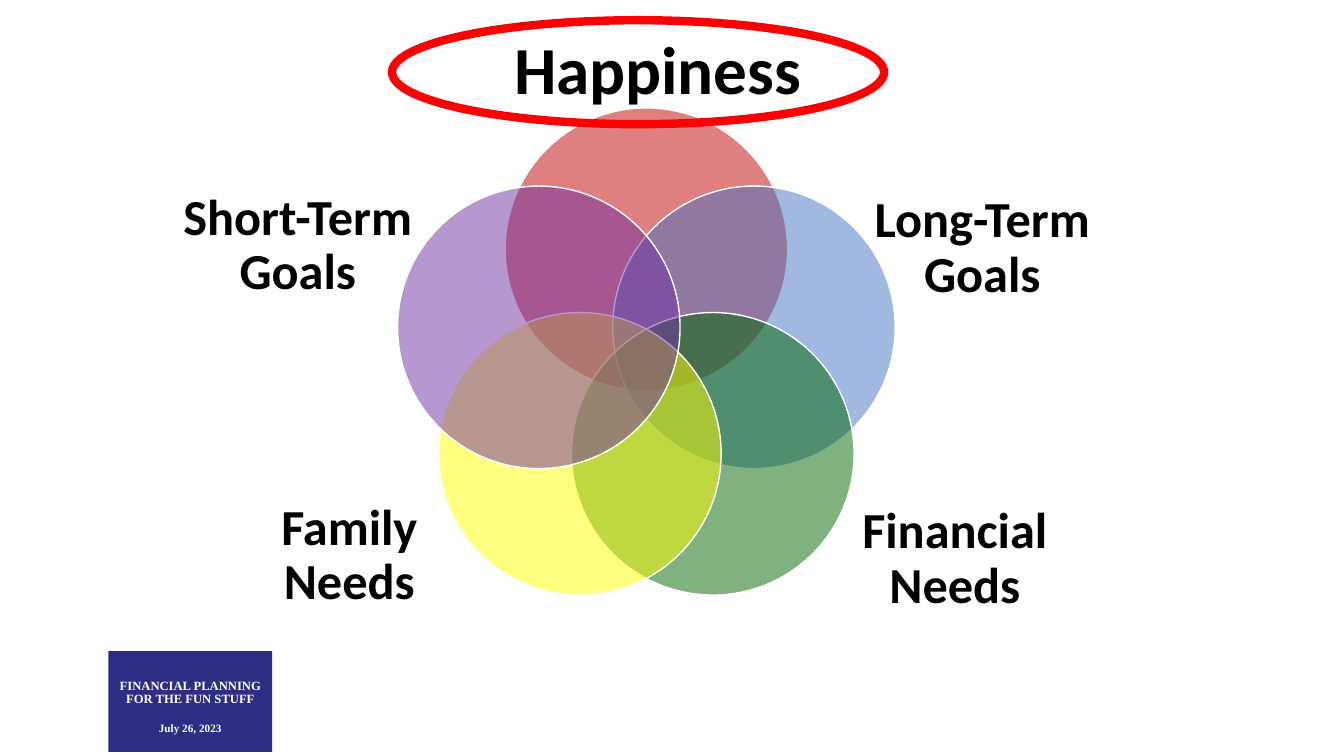
"""Build the Happiness slide: five overlapping goal circles with labels."""
import math

import lxml.etree
import pptx
import pptx.dml.color
import pptx.enum.shapes
import pptx.enum.text
import pptx.oxml.ns
import pptx.util

Cm = pptx.util.Cm
Pt = pptx.util.Pt
RGBColor = pptx.dml.color.RGBColor
MSO_SHAPE = pptx.enum.shapes.MSO_SHAPE

BLACK = RGBColor(0x00, 0x00, 0x00)
WHITE = RGBColor(0xFF, 0xFF, 0xFF)
RED = RGBColor(0xFF, 0x00, 0x00)
NAVY = RGBColor(0x2D, 0x2D, 0x83)
CRIMSON = RGBColor(0xC0, 0x00, 0x00)
BLUE = RGBColor(0x44, 0x72, 0xC4)
GREEN = RGBColor(0x00, 0x66, 0x00)
YELLOW = RGBColor(0xFF, 0xFF, 0x00)
PURPLE = RGBColor(0x70, 0x30, 0xA0)

CENTER_X, CENTER_Y = 16.29, 9.13
RING_RADIUS = 2.85
DIAMETER = 7.12


def write(p, text, size, color=BLACK, font="Calibri", before=0):
    p.alignment = pptx.enum.text.PP_ALIGN.CENTER
    p.line_spacing = 0.9
    if before:
        p.space_before = Pt(before)
    r = p.add_run()
    r.text = text
    r.font.size = Pt(size)
    r.font.name = font
    r.font.bold = True
    r.font.color.rgb = color


prs = pptx.Presentation()
prs.slide_width = Cm(33.87)
prs.slide_height = Cm(19.05)
slide = prs.slides.add_slide(prs.slide_layouts[6])
shapes = slide.shapes

badge = shapes.add_shape(MSO_SHAPE.RECTANGLE, Cm(2.73), Cm(16.41), Cm(4.13), Cm(2.54))
badge.shadow.inherit = False
badge.fill.solid()
badge.fill.fore_color.rgb = NAVY
badge.line.fill.background()
tf = badge.text_frame
tf.word_wrap = True
tf.vertical_anchor = pptx.enum.text.MSO_ANCHOR.MIDDLE
tf.margin_top = Cm(0.4)
write(tf.paragraphs[0], "FINANCIAL PLANNING FOR THE FUN STUFF", 9, WHITE, "Times New Roman")
write(tf.add_paragraph(), "July 26, 2023", 8, WHITE, "Times New Roman", before=11.5)

goals = [
    ("Happiness", 48, CRIMSON, (12.45, -0.56, 8.26, 4.78)),
    ("Long-Term Goals", 36, BLUE, (21.06, 3.68, 7.39, 5.18)),
    ("Financial Needs", 36, GREEN, (21.41, 11.51, 5.31, 5.18)),
    ("Family Needs", 36, YELLOW, (6.15, 11.43, 5.31, 5.18)),
    ("Short-Term Goals", 36, PURPLE, (3.81, 3.61, 7.39, 5.18)),
]
for i, (label, size, color, box) in enumerate(goals):
    angle = 2 * math.pi * i / len(goals)
    left = CENTER_X + RING_RADIUS * math.sin(angle) - DIAMETER / 2
    top = CENTER_Y - RING_RADIUS * math.cos(angle) - DIAMETER / 2
    sp = shapes.add_shape(MSO_SHAPE.OVAL, Cm(left), Cm(top), Cm(DIAMETER), Cm(DIAMETER))
    sp.shadow.inherit = False
    sp.fill.solid()
    sp.fill.fore_color.rgb = color
    clr = sp.fill._xPr.find(".//" + pptx.oxml.ns.qn("a:srgbClr"))
    lxml.etree.SubElement(clr, pptx.oxml.ns.qn("a:alpha"), val="50000")
    sp.line.color.rgb = WHITE
    sp.line.width = Pt(1)

    tf = shapes.add_textbox(*map(Cm, box)).text_frame
    tf.word_wrap = True
    tf.vertical_anchor = pptx.enum.text.MSO_ANCHOR.MIDDLE
    tf.margin_left = tf.margin_right = tf.margin_top = tf.margin_bottom = 0
    write(tf.paragraphs[0], label, size)

halo = shapes.add_shape(MSO_SHAPE.OVAL, Cm(9.88), Cm(0.51), Cm(12.4), Cm(2.62))
halo.shadow.inherit = False
halo.fill.background()
halo.line.color.rgb = RED
halo.line.width = Pt(6)

prs.save("out.pptx")
